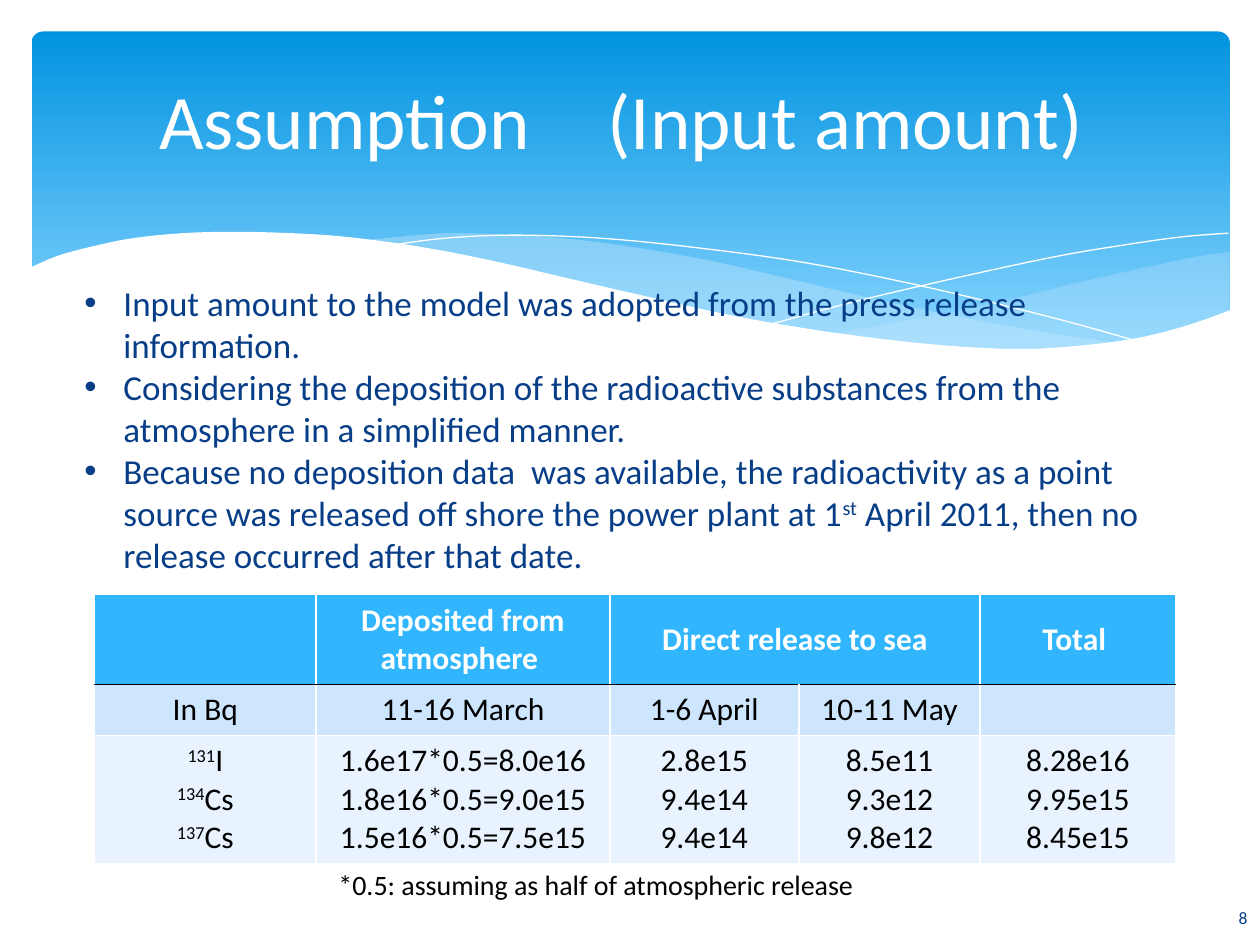
from lxml.etree import SubElement
from pptx import Presentation
from pptx.dml.color import RGBColor
from pptx.enum.shapes import MSO_SHAPE
from pptx.enum.text import MSO_ANCHOR, MSO_AUTO_SIZE, PP_ALIGN
from pptx.oxml.ns import qn
from pptx.util import Inches, Pt

NAVY = "073E87"
WHITE = "FFFFFF"
BLACK = "000000"
MIST = "C6E7FC"
STEPS = 5

SWELL_TOP = [(9.76, 2), (9.48, 2.04), (9.06, 2.13), (8.61, 2.23), (8.05, 2.37),
             (7.53, 2.48), (7.06, 2.57), (6.61, 2.65)]
SWELL_BOTTOM = [(6.61, 2.65), (7.05, 2.71), (7.57, 2.76), (8.03, 2.78), (8.44, 2.77),
                (8.81, 2.73), (9.21, 2.65), (9.49, 2.57), (9.76, 2.47)]
WAVE_TOP = [(8.93, 2.73), (8.37, 2.65), (7.75, 2.54), (7.06, 2.4), (6.29, 2.22),
            (5.69, 2.08), (5.14, 1.98), (4.65, 1.91), (4.2, 1.87), (3.61, 1.85),
            (3.28, 1.87), (2.86, 1.91)]
WAVE_BOTTOM = [(2.86, 1.91), (3.42, 1.99), (4.04, 2.11), (4.49, 2.22), (5.3, 2.4),
               (6.01, 2.55), (6.65, 2.66), (7.22, 2.74), (7.73, 2.77), (8.18, 2.78),
               (8.57, 2.77), (8.93, 2.73)]
FALLING_LINE = [(3.09, 1.95), (3.44, 1.9), (3.87, 1.87), (4.33, 1.87), (4.89, 1.9),
                (5.56, 1.97), (6.36, 2.08), (7.27, 2.26), (8.31, 2.51), (9.07, 2.72)]
RISING_LINE = [(6.13, 2.57), (6.72, 2.41), (7.48, 2.23), (8.36, 2.04), (8.95, 1.94),
               (9.38, 1.88), (9.75, 1.85)]
PAPER_TOP = [(9.77, 2.46), (9.4, 2.59), (8.99, 2.69), (8.5, 2.75), (8.09, 2.77),
             (7.61, 2.75), (7.08, 2.7), (6.48, 2.62), (5.79, 2.5), (5.03, 2.33),
             (4.47, 2.2), (3.91, 2.07), (3.4, 1.97), (2.92, 1.9), (2.5, 1.86),
             (1.93, 1.84), (1.46, 1.85), (1.06, 1.89), (0.76, 1.95), (0.46, 2.03),
             (0.23, 2.13)]

BULLETS = [
    ["Input amount to the model was adopted from the press release information."],
    ["Considering the deposition of the radioactive substances from the "
     "atmosphere in a simplified manner."],
    ["Because no deposition data  was available, the radioactivity as a point "
     "source was released off shore the power plant at 1",
     ("st",), " April 2011, then no release occurred after that date."],
]
HEADINGS = [[], [["Deposited from atmosphere "]], [["Direct release to sea"]], [], [["Total "]]]
PERIODS = [[["In Bq"]], [["11-16 March"]], [["1-6 April"]], [["10-11 May"]], []]
AMOUNTS = [
    [[("131",), "I"], [("134",), "Cs"], [("137",), "Cs"]],
    [["1.6e17*0.5=8.0e16"], ["1.8e16*0.5=9.0e15"], ["1.5e16*0.5=7.5e15"]],
    [["2.8e15"], ["9.4e14"], ["9.4e14"]],
    [["8.5e11"], ["9.3e12"], ["9.8e12"]],
    [["8.28e16"], ["9.95e15"], ["8.45e15"]],
]
ROWS = [(HEADINGS, "31B6FD"), (PERIODS, "CEE5FE"), (AMOUNTS, "E8F3FF")]


def color(value):
    return RGBColor.from_string(value)


def write(frame, paragraphs, size, fill=BLACK, bold=False, align=PP_ALIGN.LEFT,
          anchor=None, bullet=None, wrap=True):
    frame.word_wrap = wrap
    frame.auto_size = MSO_AUTO_SIZE.NONE
    if anchor is not None:
        frame.vertical_anchor = anchor
    for index, pieces in enumerate(paragraphs):
        paragraph = frame.paragraphs[0] if index == 0 else frame.add_paragraph()
        paragraph.alignment = align
        paragraph.space_before = Pt(0)
        if bullet:
            properties = paragraph._p.get_or_add_pPr()
            properties.set("marL", str(Inches(0.31)))
            properties.set("indent", str(-Inches(0.31)))
            SubElement(properties, qn("a:buChar")).set("char", bullet)
        for piece in pieces:
            raised = isinstance(piece, tuple)
            run = paragraph.add_run()
            run.text = piece[0] if raised else piece
            run.font.name = "Calibri"
            run.font.size = Pt(size)
            run.font.bold = bold
            run.font.color.rgb = color(fill)
            if raised:
                run.font._element.set("baseline", "30000")


def smooth(points):
    padded = [points[0], *points, points[-1]]
    curve = [points[0]]
    for a, b, c, d in zip(padded, padded[1:], padded[2:], padded[3:]):
        for step in range(1, STEPS + 1):
            t = step / STEPS
            curve.append(tuple(
                (2 * q + (r - p) * t + (2 * p - 5 * q + 4 * r - s) * t ** 2
                 + (3 * q - p - 3 * r + s) * t ** 3) / 2
                for p, q, r, s in zip(a, b, c, d)))
    return curve


def add_curve(slide, left, top, points, fill=None, opacity=100):
    outline = [(left + Inches(x), top + Inches(y)) for x, y in points]
    builder = slide.shapes.build_freeform(*outline[0])
    builder.add_line_segments(outline[1:], close=fill is not None)
    shape = builder.convert_to_shape()
    shape.shadow.inherit = False
    if fill is None:
        shape.fill.background()
        shape.line.color.rgb = color(WHITE)
        shape.line.width = Pt(0)
        return
    shape.line.fill.background()
    shape.fill.solid()
    shape.fill.fore_color.rgb = color(fill)
    if opacity < 100:
        tint = shape.fill._xPr.find(".//" + qn("a:srgbClr"))
        SubElement(tint, qn("a:alpha")).set("val", str(opacity * 1000))


def add_header(slide, left, top):
    banner = slide.shapes.add_shape(MSO_SHAPE.ROUNDED_RECTANGLE, left + Inches(0.25),
                                    top + Inches(0.25), Inches(9.51), Inches(2.7))
    banner.adjustments[0] = 0.034
    banner.shadow.inherit = False
    banner.line.fill.background()
    banner.fill.gradient()
    banner.fill.gradient_angle = 270
    for stop, (position, value) in zip(banner.fill.gradient_stops,
                                       [(0, "0293E0"), (0.9, "83D3FE")]):
        stop.position = position
        stop.color.rgb = color(value)
    add_curve(slide, left, top, smooth(SWELL_TOP) + smooth(SWELL_BOTTOM), MIST, 29)
    add_curve(slide, left, top, smooth(WAVE_TOP) + smooth(WAVE_BOTTOM), MIST, 40)
    add_curve(slide, left, top, smooth(FALLING_LINE))
    add_curve(slide, left, top, smooth(RISING_LINE))
    add_curve(slide, left, top, smooth(PAPER_TOP) + [(0.23, 3.29), (9.77, 3.29)], WHITE)


def place_text(slide, shape, left, top, width, height, paragraphs, size, **options):
    shape.left, shape.top, shape.width, shape.height = left, top, width, height
    slide.shapes._spTree.append(shape._element)
    write(shape.text_frame, paragraphs, size, **options)


def add_note(slide, left, top, width, height, text, size, **options):
    box = slide.shapes.add_textbox(left, top, width, height)
    write(box.text_frame, [[text]], size, **options)


def set_borders(cell, **sides):
    properties = cell._tc.get_or_add_tcPr()
    for index, side in enumerate("LRTB"):
        line = properties.makeelement(qn("a:ln" + side), {"w": str(Pt(1))})
        fill = SubElement(line, qn("a:solidFill"))
        SubElement(fill, qn("a:srgbClr")).set("val", sides.get(side, WHITE))
        properties.insert(index, line)


def add_amount_table(slide, left, top, width, height):
    table = slide.shapes.add_table(3, 5, left, top, width, height).table
    table.horz_banding = False
    for column, inches in zip(table.columns, [1.76, 2.33, 1.5, 1.44, 1.55]):
        column.width = Inches(inches)
    for row, inches in zip(table.rows, [0.65, 0.37, 0.87]):
        row.height = Inches(inches)
    for row_index, (contents, fill) in enumerate(ROWS):
        heading = row_index == 0
        for column_index, paragraphs in enumerate(contents):
            cell = table.cell(row_index, column_index)
            cell.fill.solid()
            cell.fill.fore_color.rgb = color(fill)
            set_borders(cell, **{0: {"B": BLACK}, 1: {"T": BLACK}}.get(row_index, {}))
            write(cell.text_frame, paragraphs, 18, WHITE if heading else BLACK,
                  bold=heading, align=PP_ALIGN.CENTER)
            if heading:
                cell.vertical_anchor = MSO_ANCHOR.MIDDLE
    table.cell(0, 2).merge(table.cell(0, 3))


def main():
    presentation = Presentation()
    presentation.slide_width, presentation.slide_height = Inches(10), Inches(7.5)
    slide = presentation.slides.add_slide(presentation.slide_layouts[1])
    add_header(slide, Inches(0), Inches(0))
    add_note(slide, Inches(8.73), Inches(7.08), Inches(1.27), Inches(0.4), "8", 10,
             fill=NAVY, align=PP_ALIGN.RIGHT, anchor=MSO_ANCHOR.MIDDLE)
    place_text(slide, slide.shapes.title, Inches(0.5), Inches(0.44), Inches(9), Inches(1.01),
               [["Assumption　(Input amount) "]], 44, fill=WHITE,
               align=PP_ALIGN.CENTER, anchor=MSO_ANCHOR.MIDDLE)
    add_amount_table(slide, Inches(0.75), Inches(4.72), Inches(8.58), Inches(2.1))
    add_note(slide, Inches(2.56), Inches(6.84), Inches(4.39), Inches(0.37),
             "*0.5: assuming as half of atmospheric release ", 16,
             align=PP_ALIGN.CENTER, wrap=False)
    place_text(slide, slide.placeholders[1], Inches(0.57), Inches(2.18), Inches(9),
               Inches(2.44), BULLETS, 20, fill=NAVY, anchor=MSO_ANCHOR.MIDDLE, bullet="•")
    presentation.save("out.pptx")


if __name__ == "__main__":
    main()
